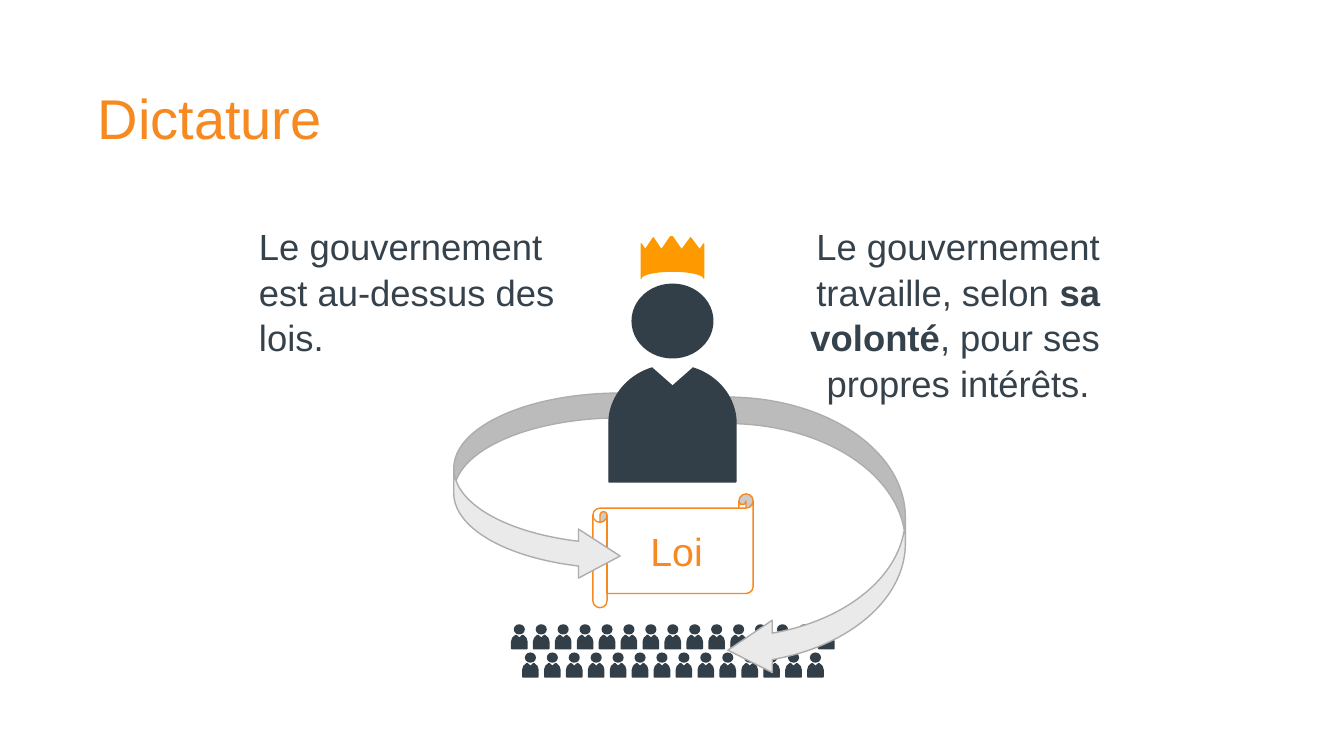
from math import cos, pi, sin

from pptx import Presentation
from pptx.dml.color import RGBColor
from pptx.enum.shapes import MSO_SHAPE as Shape
from pptx.enum.text import MSO_ANCHOR as Anchor, PP_ALIGN as Align
from pptx.util import Inches, Pt

COLORS = {
    "orange": "F6891F",
    "crown": "FF9900",
    "figure": "333F48",
    "text": "36424B",
    "white": "FFFFFF",
    "arrow": "EAEAEA",
    "arrow_edge": "ADADAD",
}


def paint(shape, fill, line=None):
    shape.shadow.inherit = False
    shape.fill.solid()
    shape.fill.fore_color.rgb = RGBColor.from_string(COLORS[fill])
    if line:
        shape.line.color.rgb = RGBColor.from_string(COLORS[line])
        shape.line.width = Pt(1)
    else:
        shape.line.fill.background()


def add_person(shapes, left, top, scale):
    person = shapes.add_group_shape()
    for kind, x, y, width, height, rotation, fill, line in (
        (Shape.FLOWCHART_DELAY, 0.01, 0.75, 1.16, 1.26, 270, "figure", "figure"),
        (Shape.ISOSCELES_TRIANGLE, 0, 0.48, 1.18, 0.52, 180, "white", None),
        (Shape.OVAL, 0.19, 0, 0.8, 0.73, 0, "figure", "figure"),
    ):
        part = person.shapes.add_shape(
            kind,
            Inches(left + x * scale), Inches(top + y * scale),
            Inches(width * scale), Inches(height * scale),
        )
        part.rotation = rotation
        paint(part, fill, line)


presentation = Presentation()
presentation.slide_width = Inches(13.33)
presentation.slide_height = Inches(7.5)
slide = presentation.slides.add_slide(presentation.slide_layouts[5])
shapes = slide.shapes

title = shapes.title
title.left, title.top = Inches(0.97), Inches(0.9)
title.width, title.height = Inches(11.4), Inches(1)
frame = title.text_frame
frame.text = "Dictature"
frame.vertical_anchor = Anchor.TOP
frame.margin_left = frame.margin_right = frame.margin_top = frame.margin_bottom = 0
paragraph = frame.paragraphs[0]
paragraph.alignment = Align.LEFT
paragraph.line_spacing = 0.9
font = paragraph.runs[0].font
font.name, font.size = "Arial", Pt(40)
font.color.rgb = RGBColor.from_string(COLORS["orange"])

law = shapes.add_shape(
    Shape.HORIZONTAL_SCROLL, Inches(5.88), Inches(4.9), Inches(1.59), Inches(1.13)
)
paint(law, "white", "orange")
law.text_frame.text = "Loi"
law.text_frame.vertical_anchor = Anchor.MIDDLE
paragraph = law.text_frame.paragraphs[0]
paragraph.alignment = Align.CENTER
font = paragraph.runs[0].font
font.name, font.size = "Arial", Pt(28)
font.color.rgb = RGBColor.from_string(COLORS["orange"])

spikes = [
    (6.36, 2.42), (6.4, 2.48), (6.48, 2.36), (6.56, 2.48), (6.65, 2.35), (6.67, 2.35),
    (6.76, 2.48), (6.85, 2.36), (6.94, 2.48), (6.98, 2.42),
]
steps = 24
brim = [
    (6.67 + 0.31 * cos(pi * step / steps), 2.76 - 0.07 * sin(pi * step / steps))
    for step in range(steps + 1)
]
outline = [(Inches(x), Inches(y)) for x, y in spikes + brim]
builder = shapes.build_freeform(*outline[0])
builder.add_line_segments(outline[1:], close=True)
paint(builder.convert_to_shape(), "crown", "crown")

for count, left, top in ((15, 5.08, 6.2), (14, 5.19, 6.48)):
    for index in range(count):
        add_person(shapes, left + index * 0.2175, top, 0.12)

for left, top, width, height, mirrored in (
    (4.5, 3.9, 1.65, 1.86, False),
    (7.22, 3.94, 1.76, 2.77, True),
):
    arrow = shapes.add_shape(
        Shape.CURVED_RIGHT_ARROW,
        Inches(left), Inches(top), Inches(width), Inches(height),
    )
    for index, value in enumerate((0.149, 0.295, 0.25)):
        arrow.adjustments[index] = value
    if mirrored:
        arrow.element.spPr.xfrm.set("flipH", "1")
    paint(arrow, "arrow", "arrow_edge")

add_person(shapes, 6.08, 2.82, 1)

for left, width, height, alignment, runs in (
    (7.28, 3.73, 1.85, Align.RIGHT, (
        ("Le gouvernement travaille, selon ", False),
        ("sa volonté", True),
        (", pour ses propres intérêts. ", False),
    )),
    (2.47, 3.28, 1.41, Align.LEFT, (
        ("Le gouvernement est au-dessus des lois.", False),
    )),
):
    box = shapes.add_textbox(Inches(left), Inches(2.15), Inches(width), Inches(height))
    box.text_frame.word_wrap = True
    paragraph = box.text_frame.paragraphs[0]
    paragraph.alignment = alignment
    paragraph.line_spacing = 1.05
    for text, bold in runs:
        run = paragraph.add_run()
        run.text = text
        run.font.name, run.font.size, run.font.bold = "Arial", Pt(26), bold
        run.font.color.rgb = RGBColor.from_string(COLORS["text"])

presentation.save("out.pptx")
